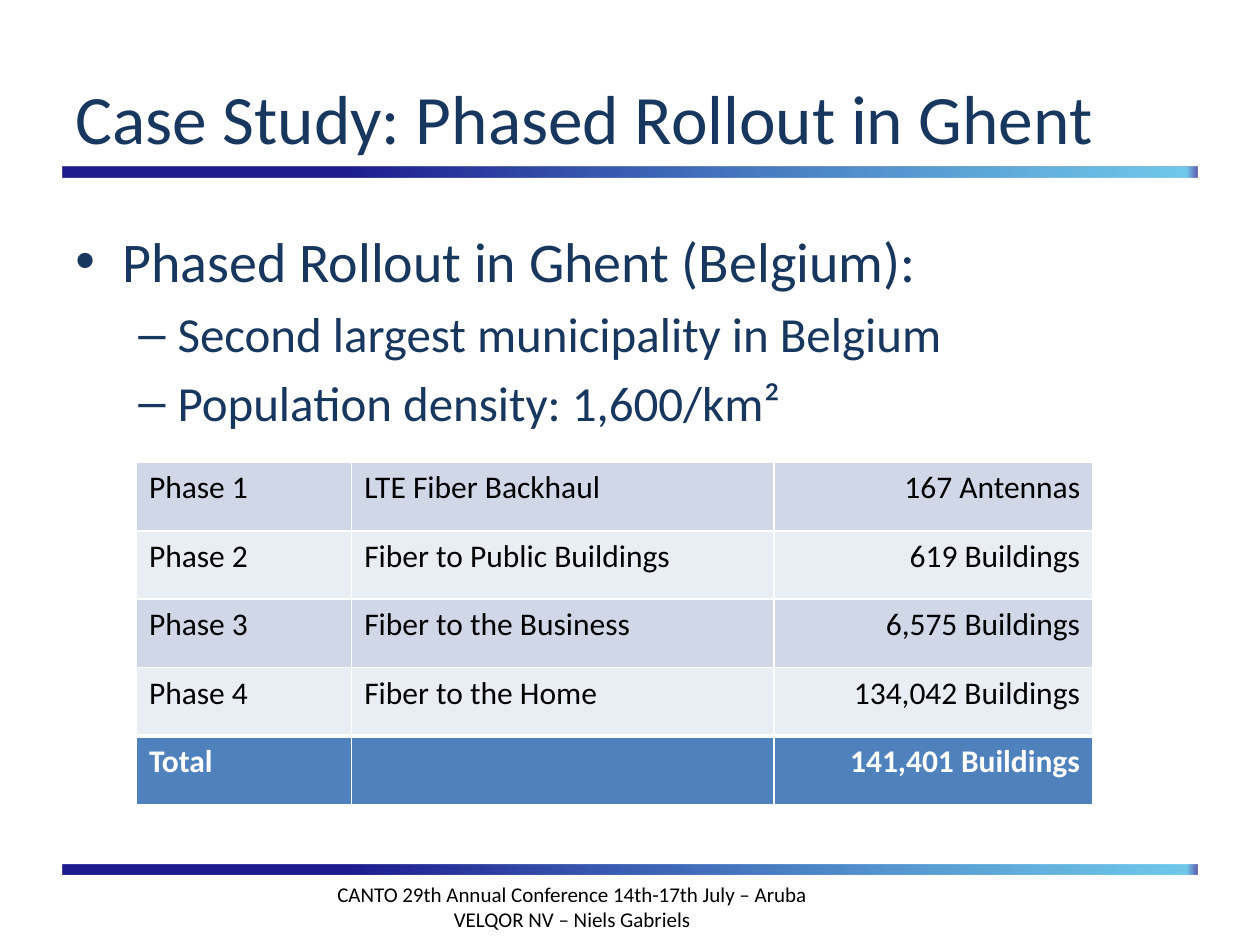
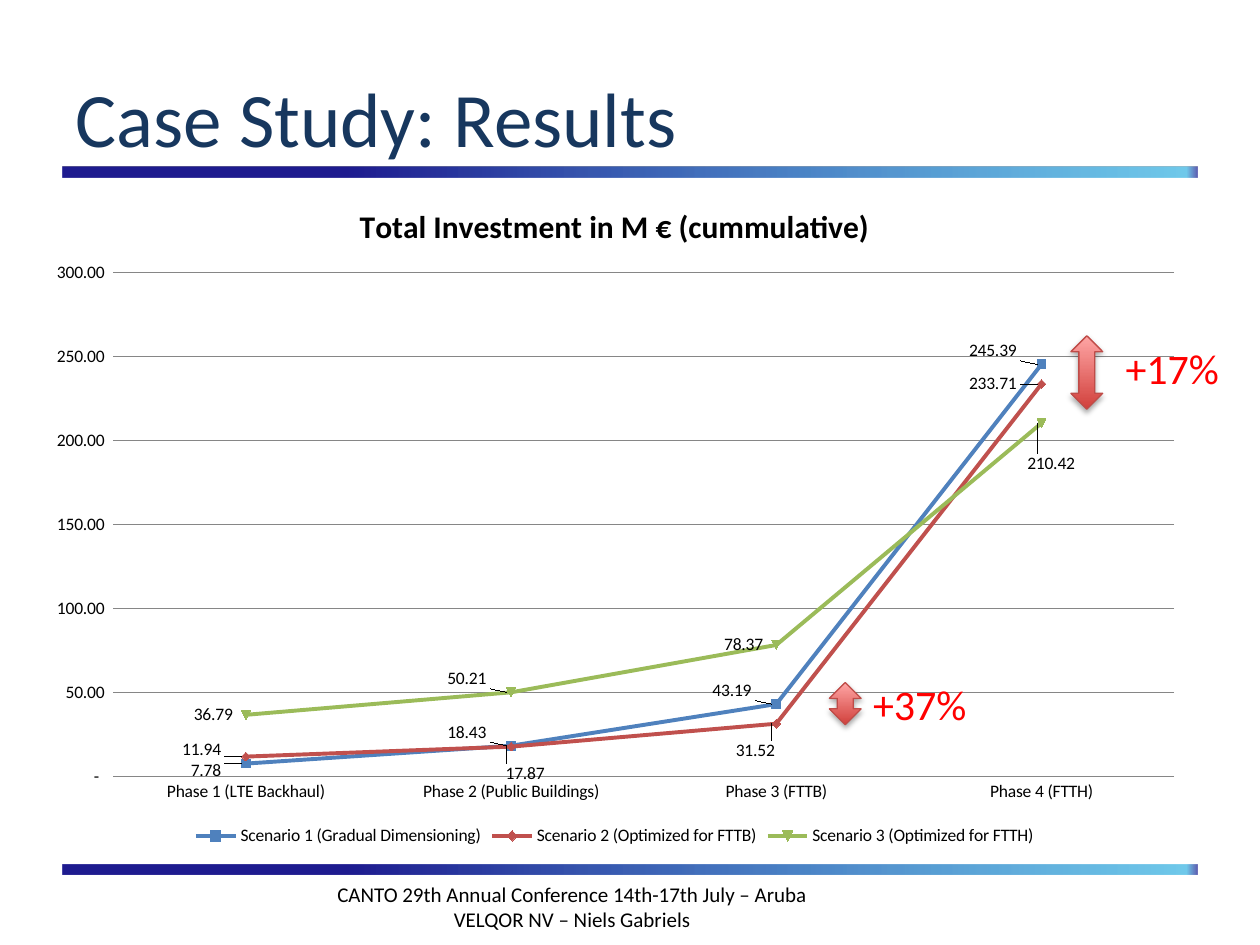
from lxml import etree
from pptx import Presentation
from pptx import util as u
from pptx.chart.data import CategoryChartData
from pptx.dml.color import RGBColor
from pptx.enum import chart as charts, shapes, text
from pptx.oxml import parse_xml
from pptx.oxml.ns import nsdecls, qn

COLORS = {
    "navy": "17375E", "black": "000000", "white": "FFFFFF", "red": "FF0000",
    "band": "1F1C90", "band_light": "39B5E3",
    "row_dark": "D0D8E8", "row_light": "E9EDF4", "total": "4F81BD",
    "arrow_dark": "D1403C", "arrow_light": "FFA6A5", "arrow_line": "BF4C48",
    "grid": "868686",
    "scenario_1": "4F81BD", "scenario_2": "C0504D", "scenario_3": "9BBB59",
}
FONT = "Calibri"
LEFT, WIDTH = 1.27, 22.86
BAND_TOPS = (3.37, 17.44)
FOOTER = ("CANTO 29th Annual Conference 14th-17th July – Aruba",
          "VELQOR NV – Niels Gabriels")
NUMBER_FORMAT = '_ * #,##0.00_ ;_ * \\-#,##0.00_ ;_ * "-"?'

PHASES = [
    ("Phase 1", "LTE Fiber Backhaul", "167 Antennas"),
    ("Phase 2", "Fiber to Public Buildings", "619 Buildings"),
    ("Phase 3", "Fiber to the Business", "6,575 Buildings"),
    ("Phase 4", "Fiber to the Home", "134,042 Buildings"),
    ("Total", "", "141,401 Buildings"),
]
PHASE_LABELS = ["Phase 1 (LTE Backhaul)", "Phase 2 (Public Buildings)",
                "Phase 3 (FTTB)", "Phase 4 (FTTH)"]
# name, colour, investments, label shifts as fractions of the chart size
SCENARIOS = [
    ("Scenario 1 (Gradual Dimensioning)", "scenario_1",
     (7.78, 18.43, 43.19, 245.39),
     ((-0.01, 0.01), (-0.01, -0.02), (-0.01, -0.02), (-0.01, -0.02))),
    ("Scenario 2 (Optimized for FTTB)", "scenario_2",
     (11.94, 17.87, 31.52, 233.71),
     ((-0.01, -0.01), (0.04, 0.04), (0.01, 0.04), (-0.01, 0))),
    ("Scenario 3 (Optimized for FTTH)", "scenario_3",
     (36.79, 50.21, 78.37, 210.42),
     (None, (-0.01, -0.02), None, (0.04, 0.06))),
]


def rgb(name):
    return RGBColor.from_string(COLORS[name])


def box(left, top, width, height):
    return [u.Cm(length) for length in (left, top, width, height)]


def style_font(font, size, color, bold=False):
    font.name, font.size, font.bold = FONT, u.Pt(size), bold
    font.color.rgb = rgb(color)


def add_run(paragraph, words, size, color, bold=False):
    run = paragraph.add_run()
    run.text = words
    style_font(run.font, size, color, bold)


def add_text(parent, place, lines, size, color, align=text.PP_ALIGN.LEFT,
             anchor=text.MSO_ANCHOR.TOP, wrap=True):
    frame = parent.shapes.add_textbox(*box(*place)).text_frame
    frame.word_wrap, frame.vertical_anchor = wrap, anchor
    for index, line in enumerate(lines):
        paragraph = frame.paragraphs[0] if index == 0 else frame.add_paragraph()
        paragraph.alignment = align
        add_run(paragraph, line, size, color)


def add_gradient_shape(parent, kind, place, stops, angle):
    """Stops are (percent, colour, opacity percent)."""
    shape = parent.shapes.add_shape(kind, *box(*place))
    shape.shadow.inherit = False
    shape.line.fill.background()
    gradient_stops = "".join(
        f'<a:gs pos="{position * 1000}"><a:srgbClr val="{COLORS[color]}">'
        f'<a:alpha val="{opacity * 1000}"/></a:srgbClr></a:gs>'
        for position, color, opacity in stops)
    gradient = parse_xml(
        f'<a:gradFill {nsdecls("a")} rotWithShape="1"><a:gsLst>{gradient_stops}'
        f'</a:gsLst><a:lin ang="{angle * 60000}" scaled="0"/></a:gradFill>')
    shape._element.spPr.find(qn("a:prstGeom")).addnext(gradient)
    return shape


def add_base_slide(presentation, title, title_size):
    slide = presentation.slides.add_slide(presentation.slide_layouts[6])
    for top in BAND_TOPS:
        add_gradient_shape(
            slide, shapes.MSO_SHAPE.RECTANGLE, (LEFT, top, WIDTH, 0.2),
            [(25, "band", 100), (99, "band_light", 72), (100, "band", 72)], 0)
    add_text(slide, (5.92, 17.65, 11.23, 1.27), FOOTER, 12, "black",
             align=text.PP_ALIGN.CENTER)
    add_text(slide, (LEFT, 0.76, WIDTH, 3.18), [title], title_size, "navy",
             anchor=text.MSO_ANCHOR.MIDDLE)
    return slide


def add_bullets(slide, place, items):
    """Items are (level, words)."""
    levels = [("•", 0.95, 0.95, 32), ("–", 2.06, 0.79, 28)]
    frame = slide.shapes.add_textbox(*box(*place)).text_frame
    frame.word_wrap = True
    for index, (level, words) in enumerate(items):
        mark, margin, hanging, size = levels[level]
        paragraph = frame.paragraphs[0] if index == 0 else frame.add_paragraph()
        properties = paragraph._p.get_or_add_pPr()
        properties.set("marL", str(u.Cm(margin)))
        properties.set("indent", str(-u.Cm(hanging)))
        etree.SubElement(properties, qn("a:buFont"), typeface="Arial")
        etree.SubElement(properties, qn("a:buChar"), char=mark)
        paragraph.level = level
        if index:
            paragraph.space_before = u.Pt(size * 0.2)
        add_run(paragraph, words, size, "navy")


def set_borders(cell, top, bottom):
    """White borders; top and bottom widths in points, sides one point."""
    properties = cell._tc.get_or_add_tcPr()
    for side, width in (("L", 1), ("R", 1), ("T", top), ("B", bottom)):
        properties.append(parse_xml(
            f'<a:ln{side} {nsdecls("a")} w="{u.Pt(width)}"><a:solidFill>'
            f'<a:srgbClr val="{COLORS["white"]}"/></a:solidFill></a:ln{side}>'))


def add_phase_table(slide, left, top, widths, row_height):
    total = len(PHASES) - 1
    table = slide.shapes.add_table(
        len(PHASES), len(widths),
        *box(left, top, sum(widths), row_height * len(PHASES))).table
    table.first_row = table.horz_banding = False
    for column, width in zip(table.columns, widths):
        column.width = u.Cm(width)
    for row, values in enumerate(PHASES):
        is_total = row == total
        fill = "total" if is_total else ("row_dark", "row_light")[row % 2]
        for column, words in enumerate(values):
            cell = table.cell(row, column)
            set_borders(cell, 3 if is_total else 1, 3 if row == total - 1 else 1)
            cell.fill.solid()
            cell.fill.fore_color.rgb = rgb(fill)
            paragraph = cell.text_frame.paragraphs[0]
            if column == len(widths) - 1:
                paragraph.alignment = text.PP_ALIGN.RIGHT
            if words:
                add_run(paragraph, words, 18, "white" if is_total else "black",
                        is_total)


def manual_layout(inner, **values):
    target = '<c:layoutTarget val="inner"/><c:xMode val="edge"/><c:yMode val="edge"/>'
    numbers = "".join(f'<c:{key} val="{value}"/>' for key, value in values.items())
    return parse_xml(f'<c:layout {nsdecls("c")}><c:manualLayout>'
                     f'{target if inner else ""}{numbers}</c:manualLayout></c:layout>')


def style_series(series, color, shifts):
    series.smooth = False
    series.format.line.color.rgb = rgb(color)
    series.format.line.width = u.Pt(2.25)
    labels = series.data_labels
    labels.show_value = True
    labels.position = charts.XL_LABEL_POSITION.LEFT
    labels.number_format, labels.number_format_is_linked = NUMBER_FORMAT, False
    style_font(labels.font, 10, "black")
    for index, shift in enumerate(shifts):
        if shift:
            label = series.points[index].data_label
            label.position = charts.XL_LABEL_POSITION.LEFT
            element = label._dLbl
            element.find(qn("c:idx")).addnext(
                manual_layout(False, x=shift[0], y=shift[1]))


def add_investment_chart(slide, place):
    data = CategoryChartData(number_format=NUMBER_FORMAT)
    data.categories = PHASE_LABELS
    for name, _, values, _ in SCENARIOS:
        data.add_series(name, values)
    chart = slide.shapes.add_chart(
        charts.XL_CHART_TYPE.LINE_MARKERS, *box(*place), data).chart
    style_font(chart.font, 10, "black")
    chart.has_title = True
    add_run(chart.chart_title.text_frame.paragraphs[0],
            "Total Investment in M € (cummulative)", 18, "black", True)
    chart.chart_title.include_in_layout = False
    chart.has_legend = True
    chart.legend.position = charts.XL_LEGEND_POSITION.BOTTOM
    chart.legend.include_in_layout = False

    plot = chart.plots[0]
    plot.vary_by_categories = False
    for series, (_, color, _, shifts) in zip(plot.series, SCENARIOS):
        style_series(series, color, shifts)
    plot_area = chart._chartSpace.chart.plotArea
    for layout in plot_area.findall(qn("c:layout")):
        plot_area.remove(layout)
    plot_area.insert(0, manual_layout(True, x=0.07, y=0.14, w=0.91, h=0.75))

    for axis in (chart.category_axis, chart.value_axis):
        axis.major_tick_mark = axis.minor_tick_mark = charts.XL_TICK_MARK.NONE
    chart.category_axis.format.line.color.rgb = rgb("grid")
    axis = chart.value_axis
    axis.minimum_scale, axis.maximum_scale, axis.major_unit = 0, 300, 50
    axis.format.line.fill.background()
    axis.major_gridlines.format.line.color.rgb = rgb("grid")
    axis.major_gridlines.format.line.width = u.Pt(0.75)
    axis.tick_labels.number_format = NUMBER_FORMAT
    axis.tick_labels.number_format_is_linked = False


def add_difference(slide, arrow_place, label_left, label_top, words):
    """A double arrow between two curves, with its percentage."""
    group = slide.shapes.add_group_shape()
    arrow = add_gradient_shape(
        group, shapes.MSO_SHAPE.UP_DOWN_ARROW, arrow_place,
        [(0, "arrow_dark", 100), (100, "arrow_light", 100)], 270)
    arrow.line.color.rgb = rgb("arrow_line")
    arrow.line.width = u.Pt(0.75)
    arrow._element.spPr.find(qn("a:effectLst")).append(parse_xml(
        f'<a:outerShdw {nsdecls("a")} blurRad="{u.Pt(3.1)}" dist="{u.Pt(1.8)}" '
        f'dir="5400000" rotWithShape="0"><a:srgbClr val="{COLORS["black"]}">'
        '<a:alpha val="35000"/></a:srgbClr></a:outerShdw>'))
    add_text(group, (label_left, label_top, 2.41, 1.27), [words], 24, "red",
             wrap=False)


def main():
    presentation = Presentation()
    presentation.slide_width, presentation.slide_height = u.Cm(25.4), u.Cm(19.05)

    rollout = add_base_slide(presentation, "Case Study: Phased Rollout in Ghent", 39.6)
    add_bullets(rollout, (LEFT, 4.45, WIDTH, 12.57), [
        (0, "Phased Rollout in Ghent (Belgium):"),
        (1, "Second largest municipality in Belgium"),
        (1, "Population density: 1,600/km²"),
    ])
    add_phase_table(rollout, 2.75, 9.32, (4.34, 8.51, 6.43), 1.38)

    results = add_base_slide(presentation, "Case Study: Results", 44)
    add_investment_chart(results, (0.64, 3.6, 23.5, 13.55))
    add_difference(results, (16.72, 13.76, 0.64, 0.85), 17.35, 13.55, "+37%")
    add_difference(results, (21.59, 6.77, 0.64, 1.48), 22.44, 6.77, "+17%")

    presentation.save("out.pptx")


if __name__ == "__main__":
    main()
